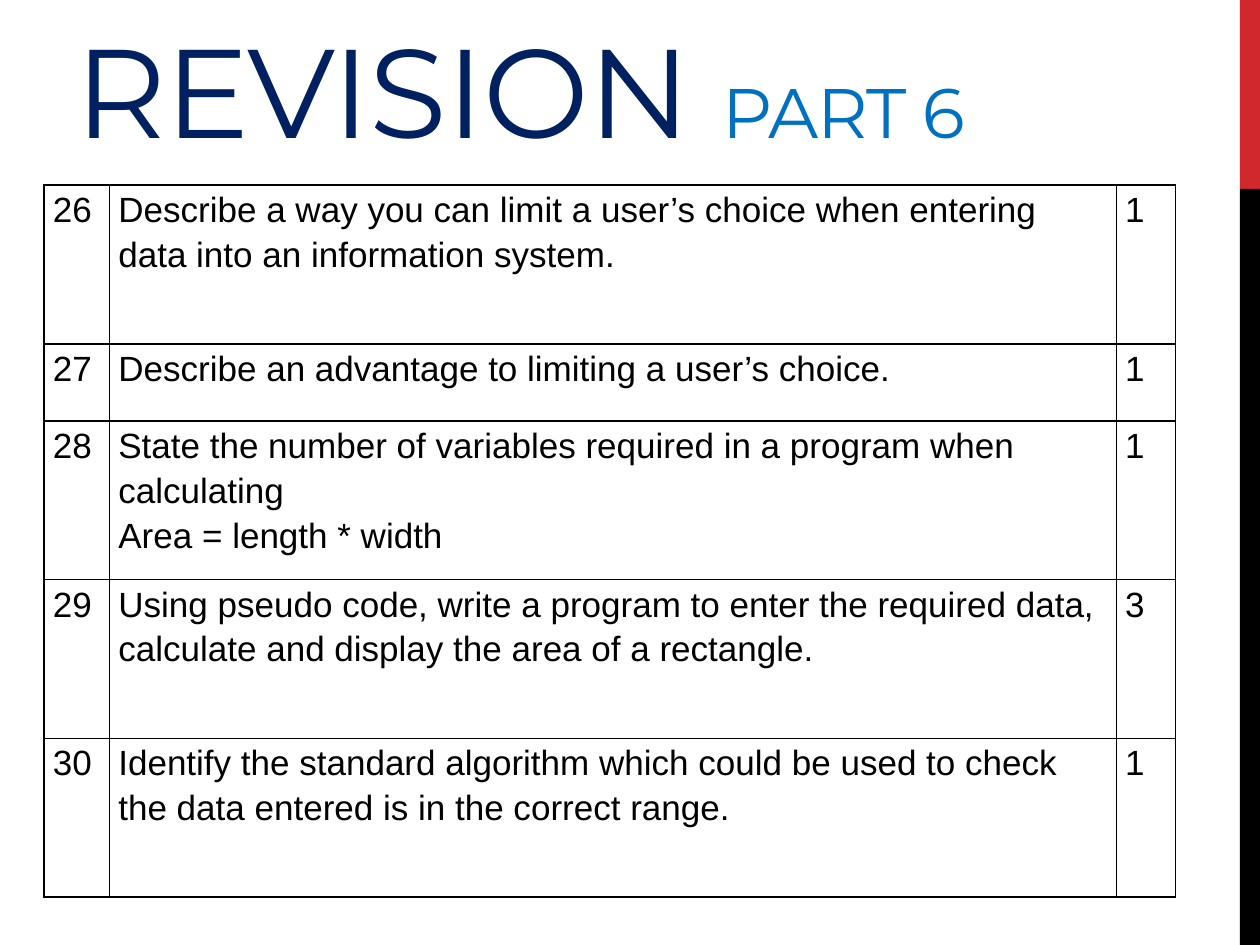
from lxml import etree
from pptx import Presentation
from pptx import util as u
from pptx.dml.color import RGBColor
from pptx.enum import shapes, text
from pptx.oxml.ns import qn

INK = "000000"
COLUMNS = [0.52, 7.99, 0.47]
LINE = 0.35
QUESTIONS = [
    (["Describe a way you can limit a user’s choice when entering data into an information system."], 1, 1.26),
    (["Describe an advantage to limiting a user’s choice."], 1, 0.61),
    (["State the number of variables required in a program when calculating",
      "Area = length * width"], 1, 1.26),
    (["Using pseudo code, write a program to enter the required data, "
      "calculate and display the area of a rectangle."], 3, 1.26),
    (["Identify the standard algorithm which could be used to check "
      "the data entered is in the correct range."], 1, 1.26),
]


def colour(value):
    return RGBColor.from_string(value)


def add_text(para, words, size, font="Arial", ink=INK, spacing=None):
    span = para.add_run()
    span.text = words
    span.font.size = u.Pt(size)
    span.font.name = font
    span.font.color.rgb = colour(ink)
    if spacing is not None:
        span.font._element.set("spc", str(spacing))


deck = Presentation()
deck.slide_width = u.Inches(10)
deck.slide_height = u.Inches(7.5)
page = deck.slides.add_slide(deck.slide_layouts[5])
side = deck.slide_width * 0.984
split = deck.slide_height * 0.2

for top, bottom, fill in [(0, split, "D1282E"), (split, deck.slide_height, INK)]:
    bar = page.shapes.add_shape(shapes.MSO_SHAPE.RECTANGLE, int(side), int(top),
                                int(deck.slide_width - side), int(bottom - top))
    bar.shadow.inherit = False
    bar.fill.solid()
    bar.fill.fore_color.rgb = colour(fill)
    bar.line.fill.background()

title = page.shapes.title
title.left, title.top, title.width, title.height = map(u.Inches, (0.5, 0.05, 8.59, 1.3))
frame = title.text_frame
frame.auto_size = text.MSO_AUTO_SIZE.NONE
frame.word_wrap = True
frame.vertical_anchor = text.MSO_ANCHOR.BOTTOM
para = frame.paragraphs[0]
para.alignment = text.PP_ALIGN.LEFT
add_text(para, "REVISION ", 72, font="Montserrat", ink="002060", spacing=-60)
add_text(para, "PART 6", 40, font="Montserrat", ink="0070C0", spacing=-60)

heights = [height for _, _, height in QUESTIONS]
table = page.shapes.add_table(len(QUESTIONS), len(COLUMNS), u.Inches(0.35), u.Inches(1.47),
                              u.Inches(sum(COLUMNS)), u.Inches(sum(heights))).table
table.first_row = False
table.horz_banding = False
for column, width in zip(table.columns, COLUMNS):
    column.width = u.Inches(width)

for number, (row, (question, marks, height)) in enumerate(zip(table.rows, QUESTIONS), 26):
    row.height = u.Inches(height)
    for cell, lines in zip(row.cells, ([str(number)], question, [str(marks)])):
        cell.margin_left = cell.margin_right = u.Inches(0.07)
        cell.margin_top = cell.margin_bottom = 0
        for index, words in enumerate(lines):
            para = cell.text_frame.add_paragraph() if index else cell.text_frame.paragraphs[0]
            para.line_spacing = 1.15
            add_text(para, words, 20)
        properties = cell._tc.get_or_add_tcPr()
        for edge in ("a:lnL", "a:lnR", "a:lnT", "a:lnB"):
            border = etree.SubElement(properties, qn(edge), w=str(u.Pt(1)))
            paint = etree.SubElement(border, qn("a:solidFill"))
            etree.SubElement(paint, qn("a:srgbClr"), val=INK)
        cell.fill.background()

deck.save("out.pptx")
